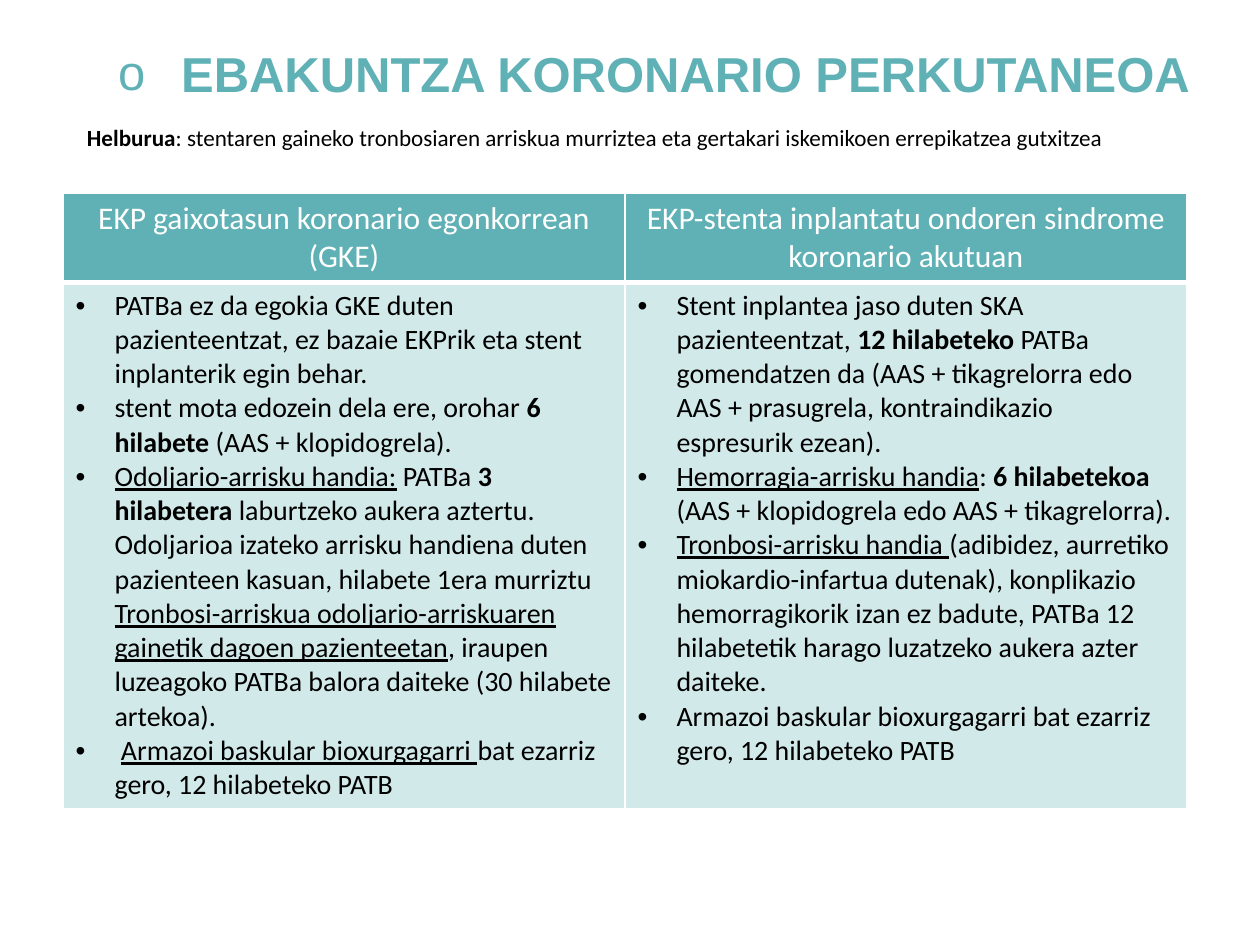
from lxml.etree import SubElement
from pptx import Presentation
from pptx.dml.color import RGBColor
from pptx.enum.text import MSO_ANCHOR, MSO_AUTO_SIZE, PP_ALIGN
from pptx.oxml.ns import qn
from pptx.util import Inches, Pt

# Content: a paragraph is a list of (text, style); "b" is bold, "u" underlined
TEAL, WHITE, BLACK = "5FB1B6", "FFFFFF", "000000"
TITLE = [("EBAKUNTZA KORONARIO PERKUTANEOA", "b")]
GOAL = [
    ("Helburua", "b"),
    (": stentaren gaineko tronbosiaren arriskua murriztea eta gertakari "
     "iskemikoen errepikatzea gutxitzea", ""),
]
HEADS = [
    "EKP gaixotasun koronario egonkorrean (GKE)",
    "EKP-stenta inplantatu ondoren sindrome koronario akutuan",
]
STABLE = [
    [("PATBa ez da egokia GKE duten pazienteentzat, ez bazaie EKPrik eta "
      "stent inplanterik egin behar.", "")],
    [("stent mota edozein dela ere, orohar ", ""), ("6 hilabete", "b"),
     (" (AAS + klopidogrela).", "")],
    [("Odoljario-arrisku handia:", "u"), (" PATBa ", ""),
     ("3 hilabetera ", "b"),
     ("laburtzeko aukera aztertu. Odoljarioa izateko arrisku handiena duten "
      "pazienteen kasuan, hilabete 1era murriztu ", ""),
     ("Tronbosi-arriskua odoljario-arriskuaren gainetik dagoen "
      "pazienteetan", "u"),
     (", iraupen luzeagoko PATBa balora daiteke (30 hilabete artekoa).", "")],
    [(" ", ""), ("Armazoi baskular bioxurgagarri ", "u"),
     ("bat ezarriz gero, 12 hilabeteko PATB", "")],
]
ACUTE = [
    [("Stent inplantea jaso duten SKA pazienteentzat, ", ""),
     ("12 hilabeteko ", "b"),
     ("PATBa gomendatzen da (AAS + tikagrelorra edo AAS + prasugrela, "
      "kontraindikazio espresurik ezean).", "")],
    [("Hemorragia-arrisku handia", "u"), (": ", ""), ("6 hilabetekoa ", "b"),
     ("(AAS + klopidogrela edo AAS + tikagrelorra).", "")],
    [("Tronbosi-arrisku handia ", "u"),
     ("(adibidez, aurretiko miokardio-infartua dutenak), konplikazio "
      "hemorragikorik izan ez badute, PATBa 12 hilabetetik harago luzatzeko "
      "aukera azter daiteke.", "")],
    [("Armazoi baskular bioxurgagarri bat ezarriz gero, 12 hilabeteko PATB",
      "")],
]


def color(code):
    return RGBColor.from_string(code)


def bullet(para, char, indent):
    props = para._p.get_or_add_pPr()
    props.set("marL", str(Inches(indent)))
    props.set("indent", str(-Inches(indent)))
    SubElement(props, qn("a:buFont")).set("typeface", "Arial")
    SubElement(props, qn("a:buChar")).set("char", char)


def write(para, runs, size, face, code, align):
    para.alignment = align
    font = para.font
    font.size, font.name, font.color.rgb = Pt(size), face, color(code)
    for text, style in runs:
        run = para.add_run()
        run.text = text
        run.font.bold = "b" in style
        run.font.underline = "u" in style


def place(shape, left, top, width, height, anchor):
    shape.left, shape.top = Inches(left), Inches(top)
    shape.width, shape.height = Inches(width), Inches(height)
    frame = shape.text_frame
    frame.word_wrap = True
    frame.auto_size = MSO_AUTO_SIZE.NONE
    frame.vertical_anchor = anchor
    return frame.paragraphs[0]


def paint(cell, code, alpha=100):
    cell.fill.solid()
    cell.fill.fore_color.rgb = color(code)
    if alpha < 100:
        tint = cell._tc.tcPr.find(".//" + qn("a:srgbClr"))
        SubElement(tint, qn("a:alpha")).set("val", str(alpha * 1000))


def border(cell, widths):
    props = cell._tc.get_or_add_tcPr()
    for spot, (side, width) in enumerate(zip("LRTB", widths)):
        line = SubElement(props, qn("a:ln" + side))
        line.set("w", str(Pt(width)))
        fill = SubElement(line, qn("a:solidFill"))
        SubElement(fill, qn("a:srgbClr")).set("val", WHITE)
        props.insert(spot, line)


deck = Presentation()
deck.slide_width, deck.slide_height = Inches(10), Inches(7.5)
slide = deck.slides.add_slide(deck.slide_layouts[0])

# Title and goal
head = place(slide.shapes.title, 0.75, 0.13, 8.88, 0.74, MSO_ANCHOR.BOTTOM)
bullet(head, "o", 0.5)
head.line_spacing = 0.9
write(head, TITLE, 28, "Arial", TEAL, PP_ALIGN.CENTER)

goal = place(slide.placeholders[1], 0.59, 0.99, 8.84, 0.34, MSO_ANCHOR.TOP)
goal.line_spacing = 0.7
goal.space_before = Pt(0)
write(goal, GOAL, 13.2, "Calibri", BLACK, PP_ALIGN.JUSTIFY)

# Two-column table
ROWS = (0.7, 4.1)
grid = slide.shapes.add_table(2, 2, Inches(0.5), Inches(1.53),
                              Inches(8.92), Inches(sum(ROWS))).table
for row, height in zip(grid.rows, ROWS):
    row.height = Inches(height)

for col, (name, items) in enumerate(zip(HEADS, (STABLE, ACUTE))):
    top, body = grid.cell(0, col), grid.cell(1, col)
    paint(top, TEAL)
    border(top, (1, 1, 1, 3))
    write(top.text_frame.paragraphs[0], [(name, "")], 18, "Calibri", WHITE,
          PP_ALIGN.CENTER)
    paint(body, TEAL, 28)
    border(body, (1, 1, 3, 1))
    frame = body.text_frame
    for count, runs in enumerate(items):
        para = frame.add_paragraph() if count else frame.paragraphs[0]
        bullet(para, "•", 0.31)
        write(para, runs, 16, "Calibri", BLACK, PP_ALIGN.LEFT)

deck.save("out.pptx")
